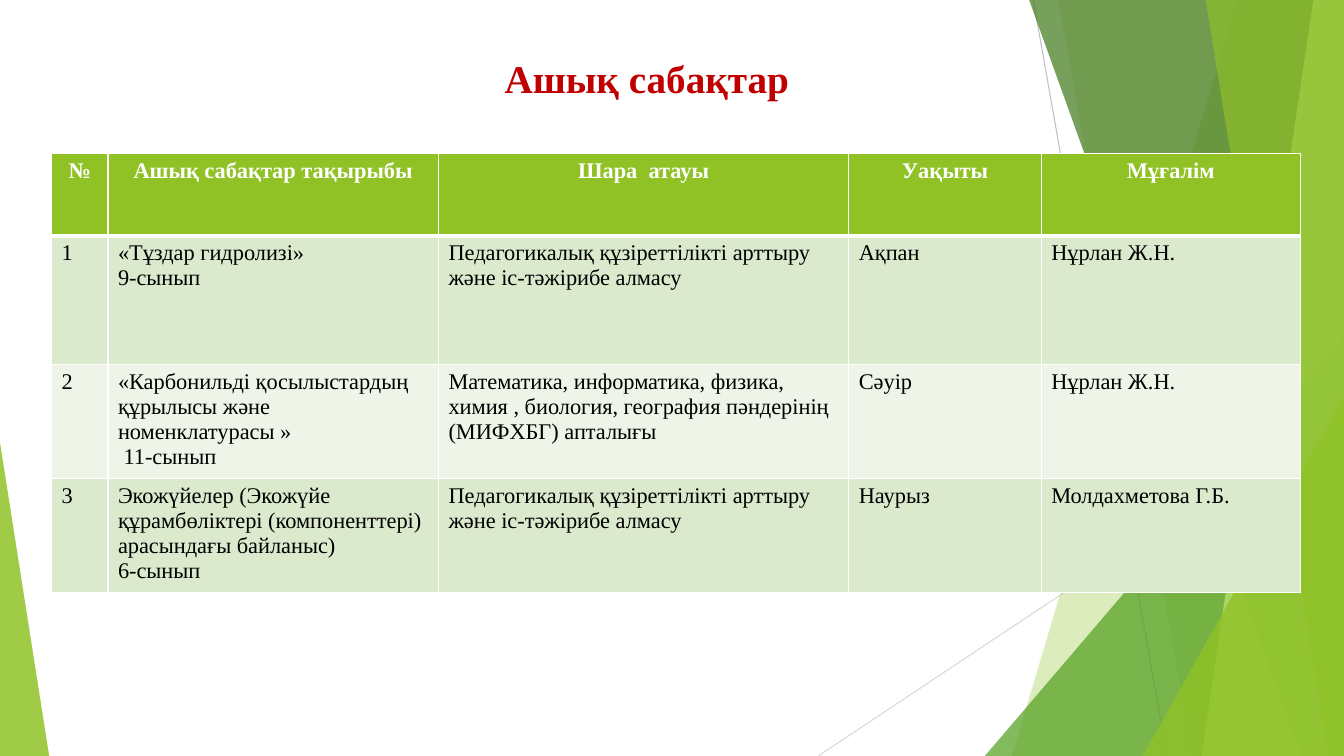
from lxml import etree
from pptx import Presentation
from pptx import util as u
from pptx.dml.color import RGBColor
from pptx.enum import shapes, text
from pptx.oxml.ns import qn

WIDTH, HEIGHT = 33.87, 19.05
FONT = "Times New Roman"

WHITE = RGBColor(0xFF, 0xFF, 0xFF)
BLACK = RGBColor(0x00, 0x00, 0x00)
RED = RGBColor(0xC0, 0x00, 0x00)
GRAY = RGBColor(0xBF, 0xBF, 0xBF)
LIGHT_GRAY = RGBColor(0xD9, 0xD9, 0xD9)
LIME = RGBColor(0x90, 0xC2, 0x26)
PALE_LIME = RGBColor(0xC0, 0xE4, 0x74)
GREEN = RGBColor(0x54, 0xA0, 0x21)
DARK_GREEN = RGBColor(0x3F, 0x78, 0x19)
BAND_DARK = RGBColor(0xDB, 0xE9, 0xCD)
BAND_LIGHT = RGBColor(0xEE, 0xF4, 0xE8)

COLUMN_WIDTHS = [1.42, 8.33, 10.34, 4.85, 6.53]
ROW_HEIGHTS = [2.08, 3.25, 2.87, 2.87]
EXCHANGE = "Педагогикалық құзіреттілікті арттыру және іс-тәжірибе алмасу"
LESSONS = [
    ["№", "Ашық сабақтар тақырыбы", "Шара  атауы", "Уақыты", "Мұғалім"],
    ["1", "«Тұздар гидролизі»\n9-сынып", EXCHANGE, "Ақпан", "Нұрлан Ж.Н."],
    ["2", "«Карбонильді қосылыстардың құрылысы және номенклатурасы »\n 11-сынып",
     "Математика, информатика, физика,  химия , биология, география "
     "пәндерінің (МИФХБГ) апталығы", "Сәуір", "Нұрлан Ж.Н."],
    ["3", "Экожүйелер (Экожүйе құрамбөліктері (компоненттері) арасындағы "
     "байланыс)\n6-сынып", EXCHANGE, "Наурыз", "Молдахметова Г.Б."],
]


def add_line(slide, x1, y1, x2, y2, color):
    line = slide.shapes.add_connector(
        shapes.MSO_CONNECTOR.STRAIGHT, u.Cm(x1), u.Cm(y1), u.Cm(x2), u.Cm(y2))
    line.line.color.rgb = color
    line.line.width = u.Pt(0.75)
    etree.SubElement(line.element.spPr, qn("a:effectLst"))


def paint(shape, color, opacity):
    """Give the shape a see-through fill (opacity in percent) and no outline."""
    shape.shadow.inherit = False
    shape.line.fill.background()
    shape.fill.solid()
    shape.fill.fore_color.rgb = color
    rgb = shape.element.spPr.find(qn("a:solidFill")).find(qn("a:srgbClr"))
    etree.SubElement(rgb, qn("a:alpha"), val=str(opacity * 1000))


def add_band(slide, top_x, bottom_x, color, opacity):
    """Fill from a slanted left edge to the right edge of the slide."""
    top = -0.02
    corners = [(WIDTH, top), (WIDTH, HEIGHT), (bottom_x, HEIGHT)]
    builder = slide.shapes.build_freeform(u.Cm(top_x), u.Cm(top))
    builder.add_line_segments([(u.Cm(x), u.Cm(y)) for x, y in corners])
    paint(builder.convert_to_shape(), color, opacity)


def add_triangle(slide, left, top, width, apex, color, opacity):
    """Stand a triangle on the slide's bottom edge; apex 0 is left, 1 is right."""
    triangle = slide.shapes.add_shape(
        shapes.MSO_SHAPE.ISOSCELES_TRIANGLE,
        u.Cm(left), u.Cm(top), u.Cm(width), u.Cm(HEIGHT - top))
    triangle.adjustments[0] = apex
    paint(triangle, color, opacity)


def add_background(slide):
    add_line(slide, 26.04, 0, 29.41, HEIGHT, GRAY)
    add_line(slide, WIDTH, 10.24, 20.62, HEIGHT, LIGHT_GRAY)
    add_band(slide, 31.19, 25.5, LIME, 30)
    add_band(slide, 26.67, 30.05, LIME, 20)
    add_triangle(slide, 24.82, 8.46, 9.05, 1, GREEN, 72)
    add_band(slide, 25.93, 32.79, DARK_GREEN, 70)
    add_band(slide, 33.1, 30.28, PALE_LIME, 70)
    add_band(slide, 30.38, 33.48, LIME, 65)
    add_triangle(slide, 28.8, 9.98, 5.07, 1, LIME, 80)
    add_triangle(slide, 0, 11.15, 1.24, 0, LIME, 85)


def write_run(paragraph, words, size, color, bold):
    run = paragraph.add_run()
    run.text = words
    run.font.name = FONT
    run.font.size = u.Pt(size)
    run.font.color.rgb = color
    run.font.bold = bold


def set_borders(cell, top, bottom):
    """Draw white borders; top and bottom widths are in points."""
    properties = cell._tc.get_or_add_tcPr()
    for side, width in (("L", 1), ("R", 1), ("T", top), ("B", bottom)):
        border = etree.SubElement(
            properties, qn("a:ln" + side), w=str(u.Pt(width)))
        fill = etree.SubElement(border, qn("a:solidFill"))
        etree.SubElement(fill, qn("a:srgbClr"), val=str(WHITE))


def fill_cell(cell, words, row):
    header = row == 0
    set_borders(cell, 3 if row == 1 else 1, 3 if header else 1)
    cell.fill.solid()
    cell.fill.fore_color.rgb = (
        LIME if header else BAND_DARK if row % 2 else BAND_LIGHT)
    frame = cell.text_frame
    for index, line in enumerate(words.split("\n")):
        paragraph = frame.add_paragraph() if index else frame.paragraphs[0]
        if header:
            paragraph.alignment = text.PP_ALIGN.CENTER
        write_run(paragraph, line, 16, WHITE if header else BLACK, header)


def add_lesson_table(slide):
    table = slide.shapes.add_table(
        len(ROW_HEIGHTS), len(COLUMN_WIDTHS), u.Cm(1.3), u.Cm(3.86),
        u.Cm(sum(COLUMN_WIDTHS)), u.Cm(sum(ROW_HEIGHTS))).table
    for column, width in zip(table.columns, COLUMN_WIDTHS):
        column.width = u.Cm(width)
    for row, height in zip(table.rows, ROW_HEIGHTS):
        row.height = u.Cm(height)
    for row, lesson in enumerate(LESSONS):
        for column, words in enumerate(lesson):
            fill_cell(table.cell(row, column), words, row)


def add_title(slide):
    box = slide.shapes.add_textbox(u.Cm(1.8), u.Cm(1.24), u.Cm(29), u.Cm(2.31))
    box.text_frame.word_wrap = True
    paragraph = box.text_frame.paragraphs[0]
    paragraph.alignment = text.PP_ALIGN.CENTER
    write_run(paragraph, "Ашық сабақтар", 28, RED, True)


def main():
    presentation = Presentation()
    presentation.slide_width = u.Cm(WIDTH)
    presentation.slide_height = u.Cm(HEIGHT)
    slide = presentation.slides.add_slide(presentation.slide_layouts[6])
    add_background(slide)
    add_lesson_table(slide)
    add_title(slide)
    presentation.save("out.pptx")


if __name__ == "__main__":
    main()
